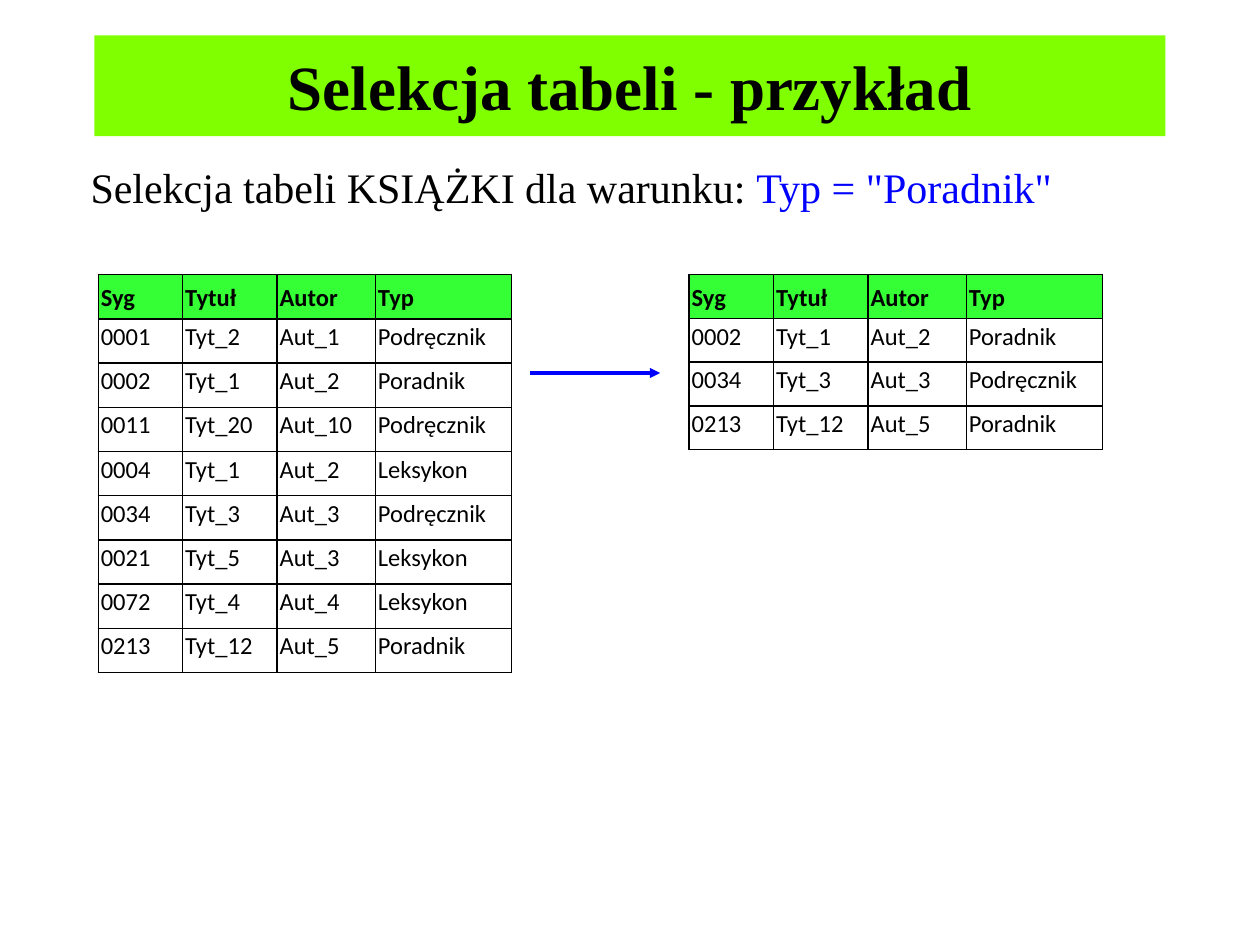
"""Build a slide showing how a condition selects rows of a book table."""
from dataclasses import dataclass
from typing import NamedTuple

from lxml.etree import SubElement
from pptx import Presentation
from pptx.dml.color import RGBColor as Rgb
from pptx.enum.shapes import MSO_CONNECTOR as Connector, MSO_SHAPE as Preset
from pptx.enum.text import MSO_ANCHOR as Anchor, PP_ALIGN as Align
from pptx.oxml import parse_xml
from pptx.oxml.ns import nsdecls, qn
from pptx.slide import Slide
from pptx.util import Inches, Pt


@dataclass(frozen=True)
class Theme:
    ink: str = "000000"
    accent: str = "0000FF"
    banner: str = "7FFF00"
    header: str = "35FF35"
    serif: str = "Times New Roman"
    sans: str = "Calibri"
    title_size: int = 36
    body_size: int = 24
    cell_size: int = 14
    border_width: float = 1
    arrow_width: float = 1.75


class Area(NamedTuple):
    left: float
    top: float
    width: float
    height: float


class Relation(NamedTuple):
    left: float
    row_height: float
    records: tuple[str, ...]


THEME = Theme()
SLIDE_WIDTH, SLIDE_HEIGHT = Inches(10), Inches(7.5)
TITLE_AREA = Area(7.5, 3.73, 85, 10.67)
CONDITION_AREA = Area(6.2, 16.4, 87.5, 12.4)
TABLE_TOP = 29.07
COLUMN_WIDTHS = (6.7, 7.5, 7.8, 10.8)
HEADINGS = "Syg Tytuł Autor Typ"
BOOKS = Relation(7.8, 4.68, (
    "0001 Tyt_2 Aut_1 Podręcznik",
    "0002 Tyt_1 Aut_2 Poradnik",
    "0011 Tyt_20 Aut_10 Podręcznik",
    "0004 Tyt_1 Aut_2 Leksykon",
    "0034 Tyt_3 Aut_3 Podręcznik",
    "0021 Tyt_5 Aut_3 Leksykon",
    "0072 Tyt_4 Aut_4 Leksykon",
    "0213 Tyt_12 Aut_5 Poradnik",
))
SELECTION = Relation(54.7, 4.63, (
    "0002 Tyt_1 Aut_2 Poradnik",
    "0034 Tyt_3 Aut_3 Podręcznik",
    "0213 Tyt_12 Aut_5 Poradnik",
))


def across(percent: float) -> int:
    """Turn a percentage of the slide's width into a length."""
    return round(SLIDE_WIDTH * percent / 100)


def down(percent: float) -> int:
    """Turn a percentage of the slide's height into a length."""
    return round(SLIDE_HEIGHT * percent / 100)


def place(area: Area) -> tuple[int, int, int, int]:
    """Turn an area in percentages into lengths."""
    return across(area.left), down(area.top), across(area.width), down(area.height)


def add_run(paragraph, wording: str, font: str, size: int,
            color: str = THEME.ink, bold: bool = False) -> None:
    """Append one formatted run."""
    run = paragraph.add_run()
    run.text = wording
    run.font.name, run.font.size, run.font.bold = font, Pt(size), bold
    run.font.color.rgb = Rgb.from_string(color)


def draw_title(slide: Slide) -> None:
    """Draw the title banner."""
    banner = slide.shapes.add_shape(Preset.RECTANGLE, *place(TITLE_AREA))
    banner.shadow.inherit = False
    banner.fill.solid()
    banner.fill.fore_color.rgb = Rgb.from_string(THEME.banner)
    banner.line.fill.background()
    banner.text_frame.vertical_anchor = Anchor.MIDDLE
    heading = banner.text_frame.paragraphs[0]
    heading.alignment = Align.CENTER
    add_run(heading, "Selekcja tabeli - przykład", THEME.serif, THEME.title_size, bold=True)


def draw_condition(slide: Slide) -> None:
    """Write the selection condition."""
    frame = slide.shapes.add_textbox(*place(CONDITION_AREA)).text_frame
    frame.word_wrap = True
    condition = frame.paragraphs[0]
    condition.space_before = Pt(THEME.body_size * 0.2)
    add_run(condition, "Selekcja tabeli KSIĄŻKI dla warunku: ", THEME.serif, THEME.body_size)
    add_run(condition, 'Typ = "Poradnik"', THEME.serif, THEME.body_size, THEME.accent)


def set_borders(cell) -> None:
    """Give a cell a thin line on all four sides."""
    properties = cell._tc.get_or_add_tcPr()
    for position, side in enumerate(("lnL", "lnR", "lnT", "lnB")):
        properties.insert(position, parse_xml(
            f'<a:{side} {nsdecls("a")} w="{Pt(THEME.border_width)}"><a:solidFill>'
            f'<a:srgbClr val="{THEME.ink}"/></a:solidFill></a:{side}>'))


def fill_cell(cell, wording: str, is_header: bool) -> None:
    """Write and format one cell."""
    cell.margin_left = cell.margin_right = Inches(0.02)
    cell.margin_top, cell.margin_bottom = Inches(0.01), 0
    cell.vertical_anchor = Anchor.MIDDLE if is_header else Anchor.TOP
    if is_header:
        cell.fill.solid()
        cell.fill.fore_color.rgb = Rgb.from_string(THEME.header)
    else:
        cell.fill.background()
    set_borders(cell)
    entry = cell.text_frame.paragraphs[0]
    entry.line_spacing, entry.space_after = 1.07, Pt(8)
    add_run(entry, wording, THEME.sans, THEME.cell_size, bold=is_header)


def draw_relation(slide: Slide, relation: Relation) -> None:
    """Draw a relation as a table under the shared headings."""
    lines = (HEADINGS, *relation.records)
    area = Area(relation.left, TABLE_TOP, sum(COLUMN_WIDTHS), relation.row_height * len(lines))
    table = slide.shapes.add_table(len(lines), len(COLUMN_WIDTHS), *place(area)).table
    table.first_row = table.horz_banding = False
    for column, width in zip(table.columns, COLUMN_WIDTHS):
        column.width = across(width)
    for index, (row, line) in enumerate(zip(table.rows, lines)):
        row.height = down(relation.row_height)
        for cell, wording in zip(row.cells, line.split()):
            fill_cell(cell, wording, is_header=index == 0)


def draw_arrow(slide: Slide, start: float, end: float, level: float) -> None:
    """Draw the horizontal arrow from the source table to the result."""
    arrow = slide.shapes.add_connector(
        Connector.STRAIGHT, across(start), down(level), across(end), down(level))
    arrow.line.color.rgb = Rgb.from_string(THEME.accent)
    arrow.line.width = Pt(THEME.arrow_width)
    SubElement(arrow.line._get_or_add_ln(), qn("a:tailEnd"), type="triangle")
    SubElement(arrow._element.spPr, qn("a:effectLst"))


def main() -> None:
    """Build and save the presentation."""
    deck = Presentation()
    deck.slide_width, deck.slide_height = SLIDE_WIDTH, SLIDE_HEIGHT
    slide = deck.slides.add_slide(deck.slide_layouts[6])
    draw_title(slide)
    draw_condition(slide)
    for relation in (BOOKS, SELECTION):
        draw_relation(slide, relation)
    draw_arrow(slide, start=42.1, end=52.4, level=39.47)
    deck.save("out.pptx")


if __name__ == "__main__":
    main()
